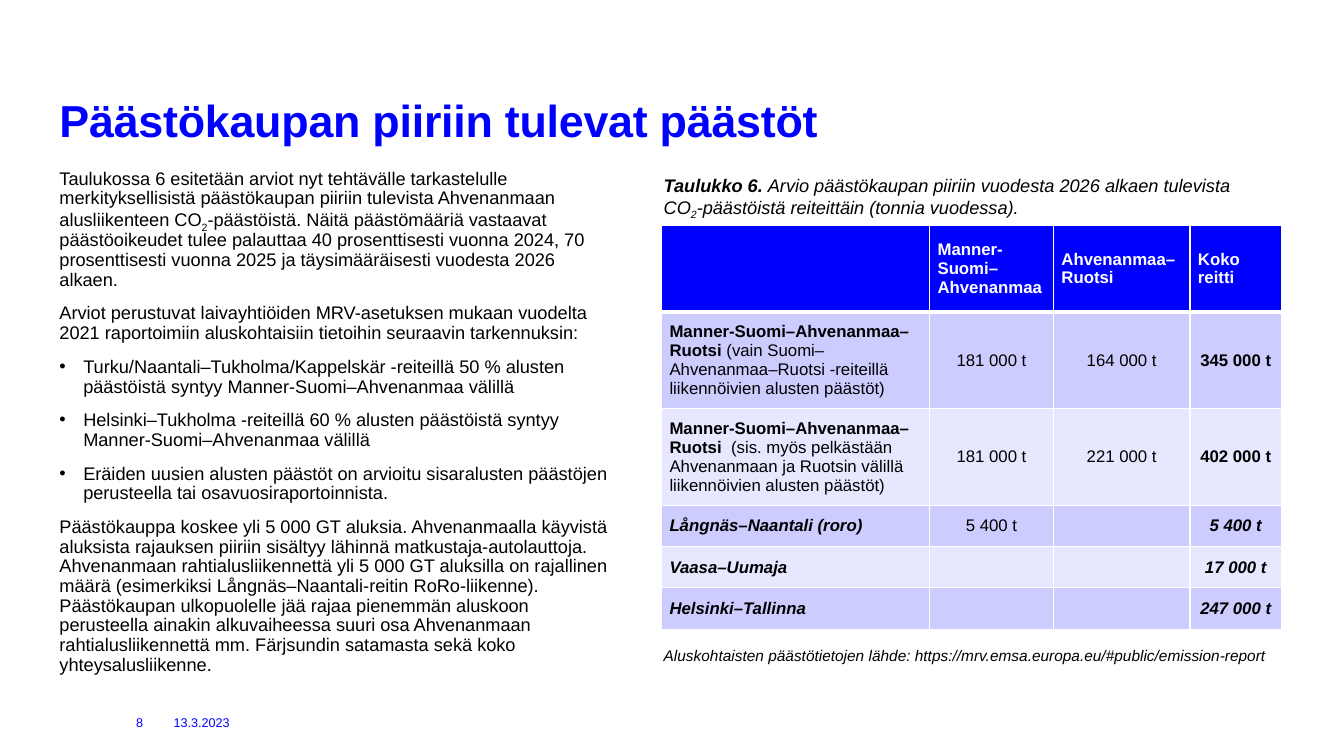
from lxml import etree
from pptx import Presentation
from pptx.dml.color import RGBColor
from pptx.enum.text import MSO_ANCHOR, PP_ALIGN
from pptx.oxml.ns import qn
from pptx.util import Pt

TOP, MIDDLE, BOTTOM = MSO_ANCHOR.TOP, MSO_ANCHOR.MIDDLE, MSO_ANCHOR.BOTTOM
LEFT, CENTER = PP_ALIGN.LEFT, PP_ALIGN.CENTER
COLORS = {"blue": "0000FF", "black": "000000", "white": "FFFFFF",
          "dark_band": "CCCCFF", "light_band": "E7E7FF"}
FONT = "Arial"
CELL_SIZE = 12
PLAIN, BOLD, ITALIC = {}, {"bold": True}, {"italic": True}
BOLD_ITALIC = {**BOLD, **ITALIC}
SUBSCRIPT = {"baseline": -25000}

BODY = [
    (False, [
        ("Taulukossa 6 esitetään arviot nyt tehtävälle tarkastelulle merkityksellisistä "
         "päästökaupan piiriin tulevista Ahvenanmaan alusliikenteen CO", PLAIN),
        ("2", SUBSCRIPT),
        ("-päästöistä. Näitä päästömääriä vastaavat päästöoikeudet tulee palauttaa "
         "40 prosenttisesti vuonna 2024, 70 prosenttisesti vuonna 2025 ja täysimääräisesti "
         "vuodesta 2026 alkaen.", PLAIN)]),
    (False, [("Arviot perustuvat laivayhtiöiden MRV-asetuksen mukaan vuodelta 2021 "
              "raportoimiin aluskohtaisiin tietoihin seuraavin tarkennuksin:", PLAIN)]),
    (True, [("Turku/Naantali–Tukholma/Kappelskär -reiteillä 50 % alusten päästöistä "
             "syntyy Manner-Suomi–Ahvenanmaa välillä", PLAIN)]),
    (True, [("Helsinki–Tukholma -reiteillä 60 % alusten päästöistä syntyy "
             "Manner-Suomi–Ahvenanmaa välillä", PLAIN)]),
    (True, [("Eräiden uusien alusten päästöt on arvioitu sisaralusten päästöjen "
             "perusteella tai osavuosiraportoinnista.", PLAIN)]),
    (False, [("Päästökauppa koskee yli 5 000 GT aluksia. Ahvenanmaalla käyvistä aluksista "
              "rajauksen piiriin sisältyy lähinnä matkustaja-autolauttoja. Ahvenanmaan "
              "rahtialusliikennettä yli 5 000 GT aluksilla on rajallinen määrä (esimerkiksi "
              "Långnäs–Naantali-reitin RoRo-liikenne). Päästökaupan ulkopuolelle jää rajaa "
              "pienemmän aluskoon perusteella ainakin alkuvaiheessa suuri osa Ahvenanmaan "
              "rahtialusliikennettä mm. Färjsundin satamasta sekä koko yhteysalusliikenne.",
              PLAIN)]),
]
CAPTION = [
    ("Taulukko 6. ", BOLD_ITALIC),
    ("Arvio päästökaupan piiriin vuodesta 2026 alkaen tulevista CO", ITALIC),
    ("2", {**ITALIC, **SUBSCRIPT}),
    ("-päästöistä reiteittäin (tonnia vuodessa).", ITALIC),
]
SOURCE = ("Aluskohtaisten päästötietojen lähde: "
          "https://mrv.emsa.europa.eu/#public/emission-report")

COLUMN_WIDTHS = [191.5, 88.5, 97.5, 65.5]
ROW_HEIGHTS = [62, 65, 65, 29.5, 29.5, 29.5]
HEADINGS = ["", "Manner-Suomi– Ahvenanmaa", "Ahvenanmaa–Ruotsi", "Koko reitti"]
WHOLE_ROUTE = ("Manner-Suomi–Ahvenanmaa–Ruotsi", BOLD)
# Each route: label spans, the two leg values, the total and the total's style
ROUTES = [
    ([WHOLE_ROUTE, (" (vain Suomi–Ahvenanmaa–Ruotsi -reiteillä liikennöivien "
                    "alusten päästöt)", PLAIN)],
     "181 000 t", "164 000 t", "345 000 t", BOLD),
    ([WHOLE_ROUTE, ("  (sis. myös pelkästään Ahvenanmaan ja Ruotsin välillä "
                    "liikennöivien alusten päästöt)", PLAIN)],
     "181 000 t", "221 000 t", "402 000 t", BOLD),
    ([("Långnäs–Naantali (roro)", BOLD_ITALIC)], "5 400 t", "", "5 400 t", BOLD_ITALIC),
    ([("Vaasa–Uumaja", BOLD_ITALIC)], "", "", "17 000 t", BOLD_ITALIC),
    ([("Helsinki–Tallinna", BOLD_ITALIC)], "", "", "247 000 t", BOLD_ITALIC),
]


def rgb(color):
    return RGBColor.from_string(COLORS[color])


def write_spans(para, spans, size, color):
    """Add runs; bold and italic are font values, baseline and spc are XML values."""
    for text, style in spans:
        span = para.add_run()
        span.text = text
        values = {"name": FONT, "size": Pt(size), "bold": False, "italic": False, **style}
        for name, value in values.items():
            if name in ("baseline", "spc"):
                span.font._element.set(name, str(value))
            else:
                setattr(span.font, name, value)
        span.font.color.rgb = rgb(color)


def add_bullet(para):
    properties = para._p.get_or_add_pPr()
    properties.set("marL", str(Pt(17)))
    properties.set("indent", str(-Pt(17)))
    etree.SubElement(properties, qn("a:buFont"), typeface=FONT)
    etree.SubElement(properties, qn("a:buChar"), char="•")


def add_text(page, area, paragraphs, size, color="black", anchor=TOP,
             inset=(0, 0), line_spacing=1.0):
    box = page.shapes.add_textbox(*map(Pt, area))
    frame = box.text_frame
    side, end = map(Pt, inset)
    values = {"word_wrap": True, "vertical_anchor": anchor, "margin_left": side,
              "margin_right": side, "margin_top": end, "margin_bottom": end}
    for name, value in values.items():
        setattr(frame, name, value)
    for index, (bulleted, spans) in enumerate(paragraphs):
        para = frame.add_paragraph() if index else frame.paragraphs[0]
        if bulleted:
            add_bullet(para)
        para.line_spacing = line_spacing
        para.space_before = Pt(10 if index else 0)
        write_spans(para, spans, size, color)


def set_borders(cell, widths):
    properties = cell._tc.get_or_add_tcPr()
    for index, (side, width) in enumerate(widths.items()):
        line = etree.Element(qn(f"a:ln{side}"), w=str(Pt(width)))
        fill = etree.SubElement(line, qn("a:solidFill"))
        etree.SubElement(fill, qn("a:srgbClr"), val=COLORS["white"])
        properties.insert(index, line)


def fill_cell(cell, spans, color, band, align, borders):
    margin = Pt(5.75)
    values = {"vertical_anchor": MIDDLE, "margin_left": margin, "margin_right": margin,
              "margin_top": margin, "margin_bottom": margin}
    for name, value in values.items():
        setattr(cell, name, value)
    cell.fill.solid()
    cell.fill.fore_color.rgb = rgb(band)
    set_borders(cell, borders)
    para = cell.text_frame.paragraphs[0]
    para.alignment = align
    write_spans(para, [span for span in spans if span[0]], CELL_SIZE, color)
    # The end mark keeps empty cells from growing to the default text size
    etree.SubElement(para._p, qn("a:endParaRPr"), sz=str(CELL_SIZE * 100))


def add_emissions_table(page):
    area = (472.5, 160.8, sum(COLUMN_WIDTHS), sum(ROW_HEIGHTS))
    frame = page.shapes.add_table(len(ROW_HEIGHTS), len(COLUMN_WIDTHS), *map(Pt, area))
    table = frame.table
    for column, width in zip(table.columns, COLUMN_WIDTHS):
        column.width = Pt(width)
    for row, height in zip(table.rows, ROW_HEIGHTS):
        row.height = Pt(height)

    thin = {"L": 1, "R": 1, "T": 1, "B": 1}
    for column, heading in enumerate(HEADINGS):
        fill_cell(table.cell(0, column), [(heading, BOLD)], "white", "blue", LEFT,
                  {**thin, "B": 3})
    for row, (label, first_leg, second_leg, total, total_style) in enumerate(ROUTES, 1):
        band = "dark_band" if row % 2 else "light_band"
        borders = {**thin, "T": 3} if row == 1 else thin
        contents = [label, [(first_leg, PLAIN)], [(second_leg, PLAIN)],
                    [(total, total_style)]]
        for column, spans in enumerate(contents):
            fill_cell(table.cell(row, column), spans, "black", band,
                      CENTER if column else LEFT, borders)


def main():
    deck = Presentation()
    deck.slide_width, deck.slide_height = Pt(960), Pt(540)
    page = deck.slides.add_slide(deck.slide_layouts[6])

    title = [("Päästökaupan piiriin tulevat päästöt", {**BOLD, "spc": -20})]
    add_text(page, (42.5, 28, 873.5, 76.5), [(False, title)], 32, "blue", BOTTOM,
             line_spacing=0.85)
    add_text(page, (42.5, 121, 396, 378), BODY, 13, line_spacing=0.9)
    add_text(page, (124, 509, 57.5, 14.5), [(False, [("13.3.2023", PLAIN)])], 9,
             "blue", MIDDLE)
    add_text(page, (97.2, 509, 25, 14.5), [(False, [("8", PLAIN)])], 9, "blue", MIDDLE)
    add_emissions_table(page)
    add_text(page, (467, 121, 443, 39), [(False, CAPTION)], 13, inset=(7.2, 3.6))
    add_text(page, (467, 458, 477.5, 21), [(False, [(SOURCE, ITALIC)])], 11,
             inset=(7.2, 3.6))

    deck.save("out.pptx")


if __name__ == "__main__":
    main()
